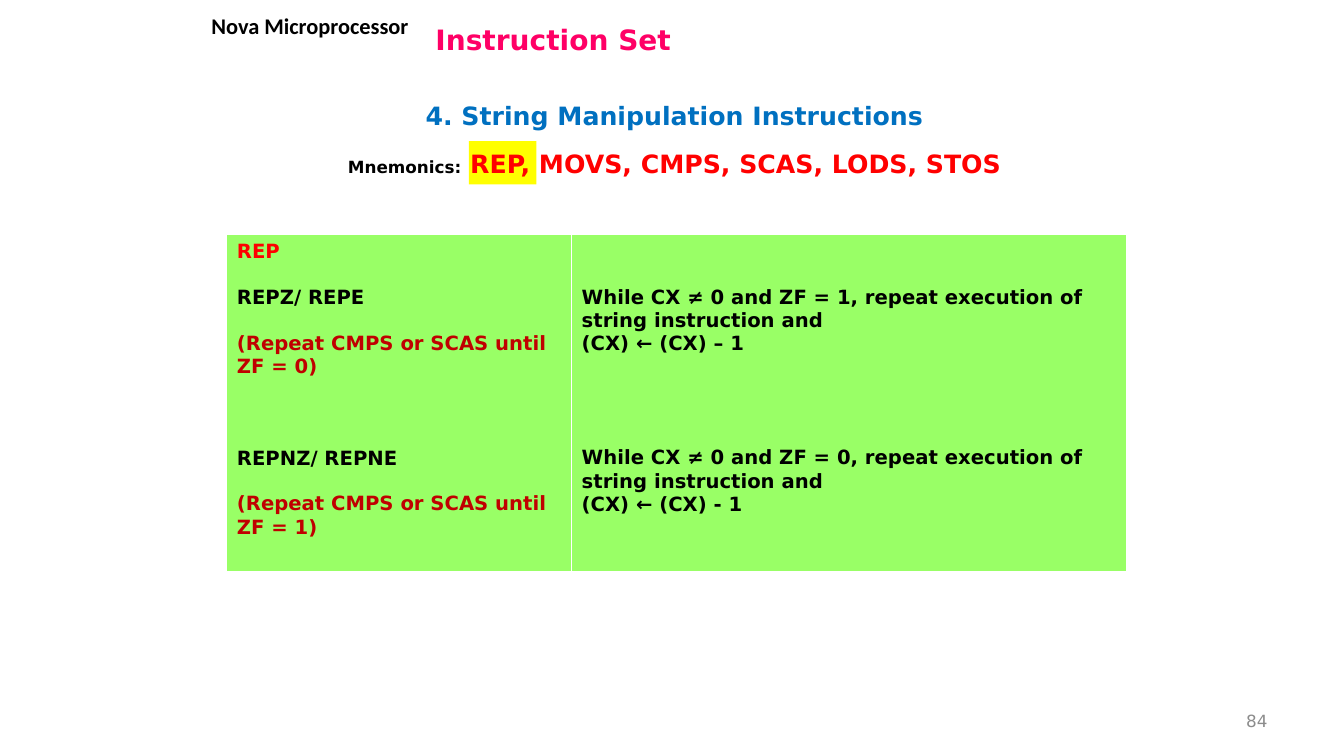
from dataclasses import dataclass

from lxml.etree import SubElement
from pptx import Presentation
from pptx.dml.color import RGBColor
from pptx.enum.shapes import MSO_SHAPE
from pptx.enum.text import MSO_ANCHOR, PP_ALIGN
from pptx.oxml.ns import qn
from pptx.table import _Cell
from pptx.text.text import TextFrame, _Paragraph
from pptx.util import Inches, Pt

BLACK = RGBColor(0x00, 0x00, 0x00)
WHITE = RGBColor(0xFF, 0xFF, 0xFF)
RED = RGBColor(0xFF, 0x00, 0x00)
DARK_RED = RGBColor(0xC0, 0x00, 0x00)
PINK = RGBColor(0xFF, 0x00, 0x66)
BLUE = RGBColor(0x00, 0x70, 0xC0)
GRAY = RGBColor(0x8C, 0x8C, 0x8C)
YELLOW = RGBColor(0xFF, 0xFF, 0x00)
GREEN = RGBColor(0x99, 0xFF, 0x66)
BODY_FONT = "DejaVu Sans"
TABLE_LINE = 16.4
BORDERS = {"a:lnL": 1, "a:lnR": 1, "a:lnT": 1, "a:lnB": 3}


@dataclass(frozen=True)
class Span:
    text: str
    size: int
    color: RGBColor
    font: str = BODY_FONT
    bold: bool = True


@dataclass(frozen=True)
class Label:
    left: float
    top: float
    width: float
    height: float
    spans: tuple[Span, ...]
    align: PP_ALIGN = PP_ALIGN.CENTER
    anchor: MSO_ANCHOR = MSO_ANCHOR.MIDDLE


@dataclass(frozen=True)
class Line:
    text: str
    color: RGBColor = BLACK
    lines_before: int = 0


@dataclass(frozen=True)
class Column:
    width: float
    lines_above: int
    lines: tuple[Line, ...]


LABELS = (
    Label(1.96, 0.93, 9.46, 0.43,
          (Span("4. String Manipulation Instructions", 18, BLUE),)),
    Label(4.22, 0.12, 8.78, 0.53, (Span("Instruction Set", 20, PINK),),
          align=PP_ALIGN.LEFT),
    Label(9.56, 6.95, 3.11, 0.4, (Span("84", 12, GRAY, bold=False),),
          align=PP_ALIGN.RIGHT),
    Label(1.74, 0.07, 2.67, 0.37,
          (Span("Nova Microprocessor", 16, BLACK, font="Calibri"),),
          anchor=MSO_ANCHOR.TOP),
    Label(1.96, 1.42, 9.46, 0.4,
          (Span("Mnemonics:", 12, BLACK),
           Span(" REP, MOVS, CMPS, SCAS, LODS, STOS", 18, RED)),
          anchor=MSO_ANCHOR.TOP),
)

COLUMNS = (
    Column(3.42, 0, (
        Line("REP", RED),
        Line("REPZ/ REPE", lines_before=1),
        Line("(Repeat CMPS or SCAS until ZF = 0)", DARK_RED, 1),
        Line("REPNZ/ REPNE", lines_before=3),
        Line("(Repeat CMPS or SCAS until ZF = 1)", DARK_RED, 1),
    )),
    Column(5.5, 2, (
        Line("While CX ≠ 0 and ZF = 1, repeat execution of string instruction and"),
        Line("(CX) ← (CX) – 1"),
        Line("While CX ≠ 0 and ZF = 0, repeat execution of string instruction and",
             lines_before=4),
        Line("(CX) ← (CX) - 1"),
    )),
)


def add_text(paragraph: _Paragraph, text: str, *, size: int, color: RGBColor,
             font: str = BODY_FONT, bold: bool = True) -> None:
    run = paragraph.add_run()
    run.text = text
    run.font.size = Pt(size)
    run.font.name = font
    run.font.bold = bold
    run.font.color.rgb = color


def draw_label(shapes, label: Label) -> None:
    frame: TextFrame = shapes.add_textbox(
        Inches(label.left), Inches(label.top),
        Inches(label.width), Inches(label.height)).text_frame
    frame.word_wrap = True
    frame.vertical_anchor = label.anchor
    paragraph = frame.paragraphs[0]
    paragraph.alignment = label.align
    for span in label.spans:
        add_text(paragraph, span.text, size=span.size, color=span.color,
                 font=span.font, bold=span.bold)


def draw_highlight(shapes) -> None:
    highlight = shapes.add_shape(MSO_SHAPE.RECTANGLE, Inches(4.65), Inches(1.4),
                                 Inches(0.67), Inches(0.43))
    highlight.shadow.inherit = False
    highlight.fill.solid()
    highlight.fill.fore_color.rgb = YELLOW
    highlight.line.fill.background()


def set_borders(cell: _Cell) -> None:
    properties = cell._tc.get_or_add_tcPr()
    for position, (tag, width) in enumerate(BORDERS.items()):
        border = SubElement(properties, qn(tag), w=str(Pt(width)))
        fill = SubElement(border, qn("a:solidFill"))
        SubElement(fill, qn("a:srgbClr"), val=str(WHITE))
        properties.insert(position, border)


def fill_cell(cell: _Cell, column: Column) -> None:
    cell.fill.solid()
    cell.fill.fore_color.rgb = GREEN
    cell.margin_top = Inches(0.05) + Pt(column.lines_above * TABLE_LINE)
    set_borders(cell)
    frame = cell.text_frame
    for index, line in enumerate(column.lines):
        paragraph = frame.add_paragraph() if index else frame.paragraphs[0]
        if line.lines_before:
            paragraph.space_before = Pt(line.lines_before * TABLE_LINE)
        add_text(paragraph, line.text, size=14, color=line.color)


def draw_instructions(shapes) -> None:
    width = sum(column.width for column in COLUMNS)
    table = shapes.add_table(1, len(COLUMNS), Inches(2.25), Inches(2.33),
                             Inches(width), Inches(3.35)).table
    table.first_row = False
    table.horz_banding = False
    for index, column in enumerate(COLUMNS):
        table.columns[index].width = Inches(column.width)
        fill_cell(table.cell(0, index), column)


def main() -> None:
    presentation = Presentation()
    presentation.slide_width = Inches(13.33)
    presentation.slide_height = Inches(7.5)
    shapes = presentation.slides.add_slide(presentation.slide_layouts[6]).shapes
    draw_highlight(shapes)
    for label in LABELS:
        draw_label(shapes, label)
    draw_instructions(shapes)
    presentation.save("out.pptx")


if __name__ == "__main__":
    main()
